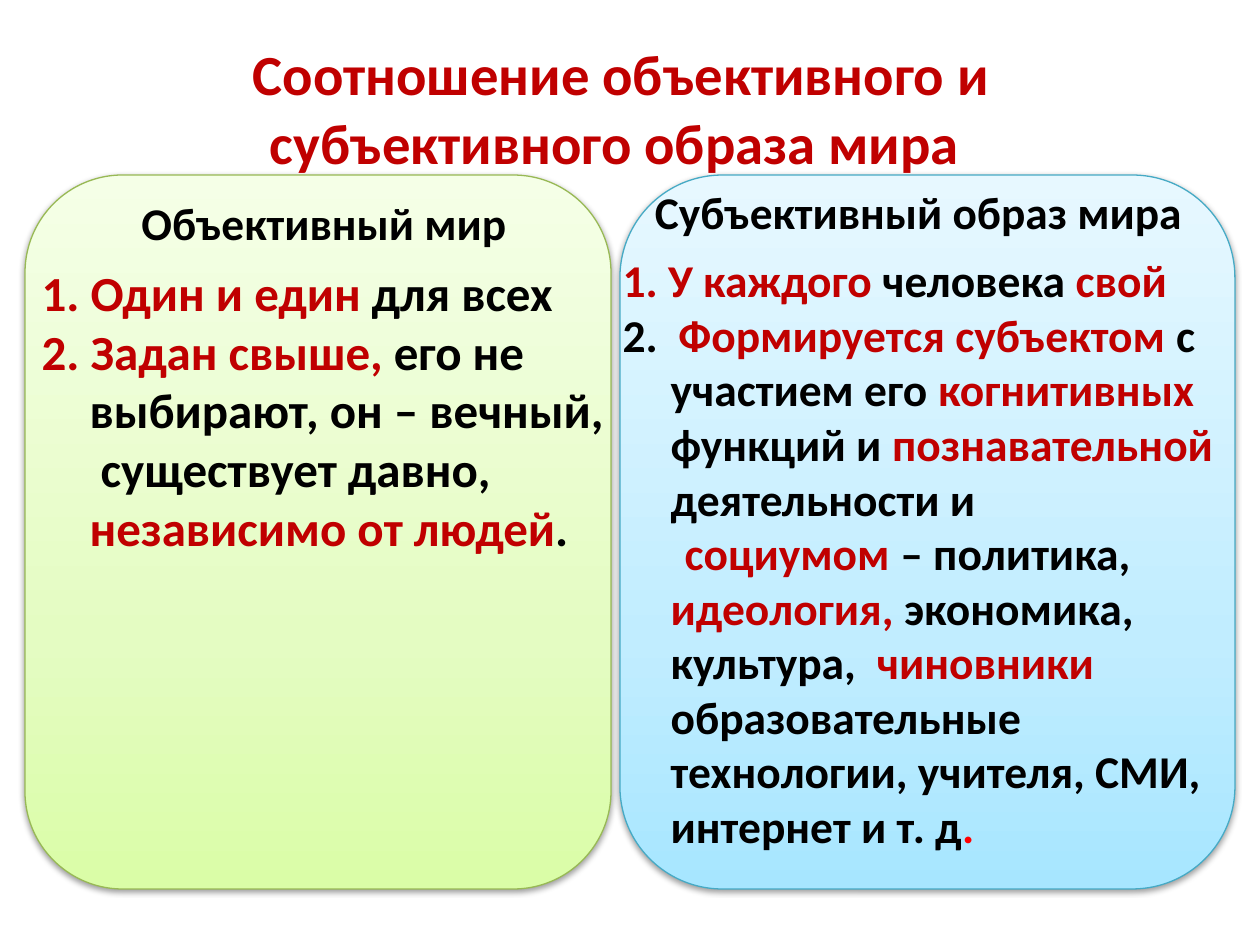
from copy import deepcopy
from typing import NamedTuple

from lxml.etree import SubElement as Sub
from pptx import Presentation
from pptx.dml.color import RGBColor
from pptx.enum.shapes import MSO_SHAPE as Shape
from pptx.enum.text import MSO_ANCHOR as Anchor, MSO_AUTO_SIZE as Fit, PP_ALIGN as Align
from pptx.oxml.ns import qn
from pptx.util import Pt

SCALE = 7257.14  # EMU per px, 126 px to the inch
FONT = "Calibri"
INK, RED, DOT = "000000", "C00000", "FF0000"
HANG = 48


class Box(NamedTuple):
    x: int
    y: int
    w: int
    h: int


class Bit(NamedTuple):
    text: str
    hue: str = INK


class Item(NamedTuple):
    bits: list[Bit]
    first: int = -HANG  # first-line indent


class Panel(NamedTuple):
    card: Box
    stops: list[str]
    edge: str
    head: Box
    label: str
    body: Box
    size: int
    items: list[Item]


def px(n: int) -> int:
    return round(n * SCALE)


def color(code: str) -> RGBColor:
    return RGBColor.from_string(code)


def place(shape, box: Box) -> None:
    shape.left, shape.top, shape.width, shape.height = map(px, box)


def style(run, size: float, hue: str) -> None:
    font = run.font
    font.name, font.size, font.bold = FONT, Pt(size), True
    font.color.rgb = color(hue)


def draw_card(slide, panel: Panel) -> None:
    card = slide.shapes.add_shape(Shape.ROUNDED_RECTANGLE, *map(px, panel.card))
    # Three-stop gradient, dark at the bottom
    fill = card.fill
    fill.gradient()
    fill.gradient_angle = 90
    stops = card.element.spPr.find(qn("a:gradFill")).find(qn("a:gsLst"))
    stops.insert(1, deepcopy(stops[0]))
    for stop, spot, hue in zip(fill.gradient_stops, (0, 0.35, 1), panel.stops):
        stop.position = spot
        stop.color.rgb = color(hue)
    card.line.color.rgb = color(panel.edge)
    card.line.width = Pt(0.75)
    # Soft shadow below the card
    card.shadow.inherit = False
    glow = card.element.spPr.find(qn("a:effectLst"))
    shade = Sub(glow, qn("a:outerShdw"), blurRad=str(Pt(3.1)),
                dist=str(Pt(1.6)), dir="5400000", rotWithShape="0")
    tint = Sub(shade, qn("a:srgbClr"), val=INK)
    Sub(tint, qn("a:alpha"), val="38000")
    # Cards lie behind the text
    slide.shapes._spTree.insert(2, card.element)


def set_line(shape, box: Box, text: str, size: float, hue: str, anchor):
    place(shape, box)
    frame = shape.text_frame
    frame.text = text
    frame.word_wrap, frame.auto_size = True, Fit.NONE
    frame.vertical_anchor = anchor
    para = frame.paragraphs[0]
    para.alignment = Align.CENTER
    style(para.runs[0], size, hue)
    return frame


def set_list(shape, box: Box, items: list[Item], size: int) -> None:
    place(shape, box)
    frame = shape.text_frame
    frame.text = "\n".join("" for _ in items)
    frame.word_wrap, frame.auto_size = True, Fit.NONE
    frame.vertical_anchor = Anchor.TOP
    for para, item in zip(frame.paragraphs, items):
        para.alignment = Align.LEFT
        para.space_before = Pt(0)
        props = para._p.get_or_add_pPr()
        props.set("marL", str(px(HANG)))
        props.set("indent", str(px(item.first)))
        Sub(props, qn("a:buNone"))
        for bit in item.bits:
            run = para.add_run()
            run.text = bit.text
            style(run, size, bit.hue)


LEFT = Panel(
    Box(25, 175, 586, 714), ["DAFDA7", "E4FCC2", "F5FFE7"], "98B955",
    Box(29, 197, 590, 59), "Объективный мир",
    Box(29, 256, 590, 659), 28,
    [
        Item([Bit("1. Один и един ", RED), Bit("для всех")]),
        Item([
            Bit("2. Задан свыше, ", RED),
            Bit("его не выбирают, он – вечный,  существует давно, "),
            Bit("независимо от людей", RED), Bit("."),
        ]),
    ],
)
RIGHT = Panel(
    Box(620, 175, 615, 714), ["A7E6FF", "C1EDFF", "E7F8FF"], "46AAC5",
    Box(640, 186, 557, 59), "Субъективный образ мира",
    Box(610, 246, 630, 650), 26,
    [
        Item([Bit("1. У каждого ", RED), Bit("человека"), Bit(" свой", RED)]),
        Item([
            Bit("2.  "), Bit("Формируется субъектом", RED),
            Bit(" с участием его "), Bit("когнитивных ", RED),
            Bit("функций и "), Bit("познавательной", RED),
            Bit(" деятельности и"),
        ]),
        Item([
            Bit("социумом ", RED), Bit("– политика, "),
            Bit("идеология,", RED), Bit(" экономика, культура,  "),
            Bit("чиновники ", RED),
            Bit("образовательные технологии, учителя, СМИ, интернет и т. д"),
            Bit(".", DOT),
        ], first=14),
    ],
)


def main() -> None:
    deck = Presentation()
    deck.slide_width, deck.slide_height = px(1260), px(945)
    slide = deck.slides.add_slide(deck.slide_layouts[4])  # comparison layout
    title, *slots = slide.placeholders

    # Title, set low in its box
    frame = set_line(title, Box(54, 0, 1134, 158),
                     "Соотношение объективного и субъективного образа мира ",
                     32.4, RED, Anchor.MIDDLE)
    frame.margin_top = px(63)
    frame.margin_left = frame.margin_right = px(76)

    # Two panels: card, heading and list
    for panel, head, body in zip((LEFT, RIGHT), slots[::2], slots[1::2]):
        draw_card(slide, panel)
        set_line(head, panel.head, panel.label, 25.9, INK, Anchor.BOTTOM)
        set_list(body, panel.body, panel.items, panel.size)

    deck.save("out.pptx")


if __name__ == "__main__":
    main()
